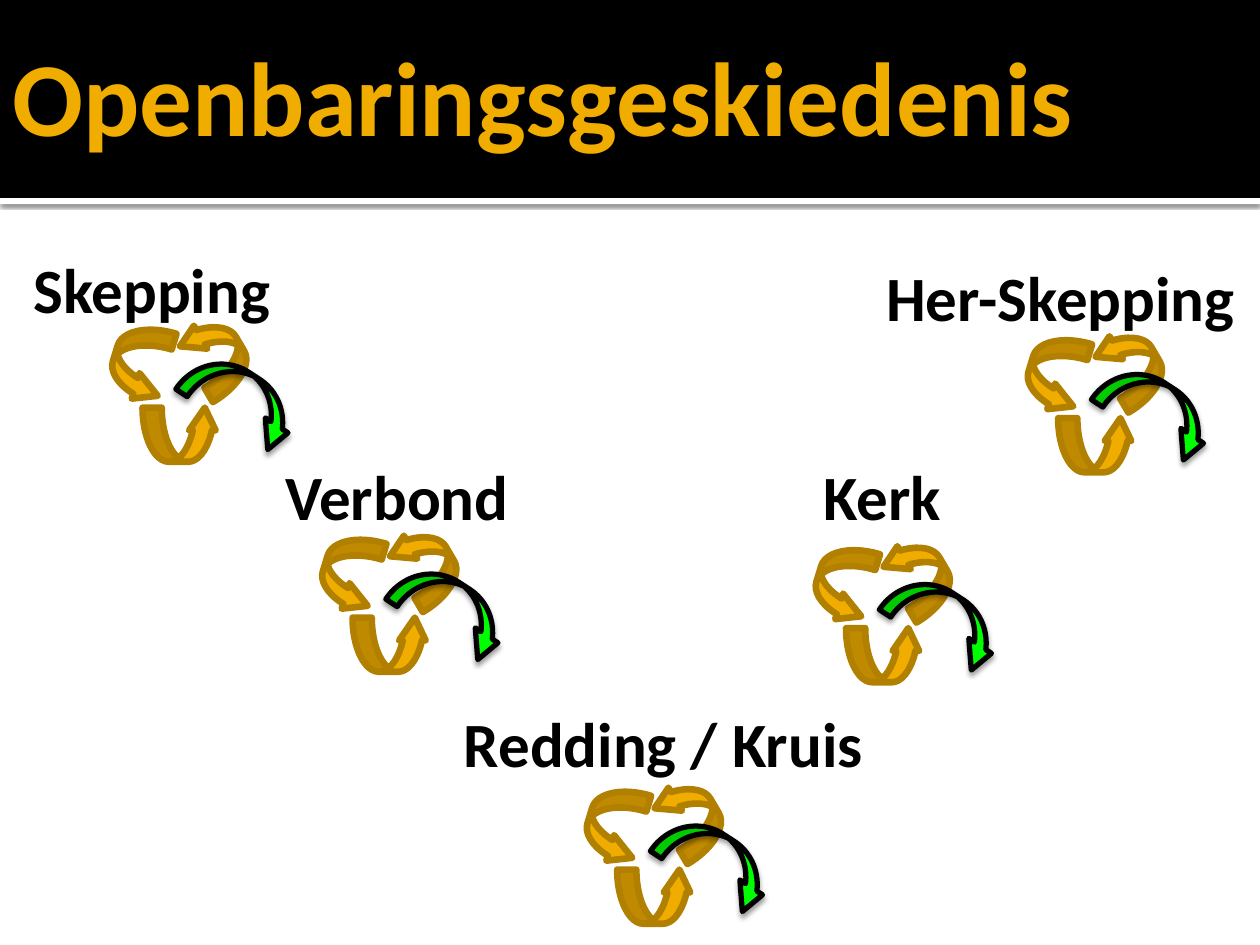
import pptx
import pptx.dml.color
import pptx.enum.shapes
import pptx.enum.text
import pptx.oxml
import pptx.oxml.ns
import pptx.util
from lxml import etree

RGBColor = pptx.dml.color.RGBColor
Shapes = pptx.enum.shapes.MSO_SHAPE
Align = pptx.enum.text.PP_ALIGN
Anchor = pptx.enum.text.MSO_ANCHOR
qn = pptx.oxml.ns.qn

BLACK = RGBColor(0x00, 0x00, 0x00)
WHITE = RGBColor(0xFF, 0xFF, 0xFF)
GOLD = RGBColor(0xF0, 0xAD, 0x00)
DARK_GOLD = RGBColor(0xB2, 0x80, 0x00)
GREEN = RGBColor(0x00, 0xFF, 0x00)

COLUMNS, ROWS = 120, 90
CELL = pptx.util.Inches(10) // COLUMNS

BAND_HEIGHT = 18.85
LABEL_HEIGHT = 8.5

# column, row, width, height, rotation, flips, adjustments; from the cycle's corner
CYCLE_ARROWS = [
    (0, 0, 5.04, 7.44, 16.9, "", (0.311, 0.504, 0.453)),
    (7.25, -0.8, 5.04, 7.44, 329.5, "HV", (0.314, 0.504, 0.422)),
    (3.8, 6.9, 5.16, 7.2, 270, "", (0.355, 0.491, 0.42)),
]
EXIT_ARROW = (9.7, 1.35, 5.16, 11.76, 123.3, "V", (0.25, 0.5, 0.462))

# label, column, row, width, alignment, cycle column, cycle row
STAGES = [
    ("Skepping", 2, 23.3, 30, Align.LEFT, 10.8, 30.9),
    ("Verbond", 26, 43, 29, Align.LEFT, 30.8, 50.9),
    ("Redding / Kruis", 43, 66.5, 42, Align.LEFT, 56, 74.9),
    ("Kerk", 66, 43, 36, Align.CENTER, 77.8, 51.9),
    ("Her-Skepping", 80, 24, 42, Align.CENTER, 98, 31.9),
]


def grid(*cells):
    return [round(cell * CELL) for cell in cells]


def add_shadow(shape, opacity, blur, distance):
    """Give the shape a black shadow falling straight down."""
    shape.shadow.inherit = False
    effects = shape.element.spPr.find(qn("a:effectLst"))
    shadow = etree.SubElement(
        effects, qn("a:outerShdw"),
        blurRad=str(pptx.util.Pt(blur)), dist=str(pptx.util.Pt(distance)),
        dir="5400000", algn="ctr", rotWithShape="0")
    color = etree.SubElement(shadow, qn("a:srgbClr"), val=str(BLACK))
    etree.SubElement(color, qn("a:alpha"), val=str(opacity * 1000))


def add_band(page, row, height, color):
    band = page.shapes.add_shape(Shapes.RECTANGLE, *grid(0, row, COLUMNS, height))
    band.shadow.inherit = False
    band.fill.solid()
    band.fill.fore_color.rgb = color
    band.line.fill.background()
    return band


def add_text(page, text, place, size, color, align=Align.LEFT):
    box = page.shapes.add_textbox(*grid(*place))
    box.text_frame.word_wrap = True
    para = box.text_frame.paragraphs[0]
    para.alignment = align
    span = para.add_run()
    span.text = text
    span.font.name = "Calibri"
    span.font.size = pptx.util.Pt(size)
    span.font.bold = True
    span.font.color.rgb = color
    return box


def add_arrow(group, corner, arrow, fill, line, weight):
    column, row, width, height, rotation, flips, adjustments = arrow
    shape = group.shapes.add_shape(
        Shapes.CURVED_RIGHT_ARROW,
        *grid(corner[0] + column, corner[1] + row, width, height))
    shape.rotation = rotation
    for axis in flips:
        shape.element.spPr.find(qn("a:xfrm")).set("flip" + axis, "1")
    for index, value in enumerate(adjustments):
        shape.adjustments[index] = value
    shape.shadow.inherit = False
    shape.fill.solid()
    shape.fill.fore_color.rgb = fill
    shape.line.color.rgb = line
    shape.line.width = pptx.util.Pt(weight)
    etree.SubElement(shape.element.spPr.find(qn("a:ln")), qn("a:round"))
    return shape


def add_cycle(page, corner):
    """Three gold arrows in a ring, with a green arrow leading out of it."""
    group = page.shapes.add_group_shape()
    for arrow in CYCLE_ARROWS:
        add_arrow(group, corner, arrow, GOLD, DARK_GOLD, 3.78)
    exit_arrow = add_arrow(group, corner, EXIT_ARROW, GREEN, BLACK, 3)
    add_shadow(exit_arrow, 38, 3.1, 2)


def add_header(page):
    stripe = add_band(page, BAND_HEIGHT, 0.6, WHITE)
    add_shadow(stripe, 60, 2.5, 0.8)
    add_band(page, 0, BAND_HEIGHT, BLACK)
    title = add_text(page, "Openbaringsgeskiedenis", (0, 1, COLUMNS, 16), 60, GOLD)
    title.text_frame.vertical_anchor = Anchor.MIDDLE
    title.text_frame.margin_right = pptx.util.Inches(0.05)


def main():
    deck = pptx.Presentation()
    deck.slide_width, deck.slide_height = grid(COLUMNS, ROWS)
    page = deck.slides.add_slide(deck.slide_layouts[6])
    page.background.fill.solid()
    page.background.fill.fore_color.rgb = WHITE
    add_header(page)
    for *_, column, row in STAGES:
        add_cycle(page, (column, row))
    for label, column, row, width, align, *_ in STAGES:
        add_text(page, label, (column, row, width, LABEL_HEIGHT), 36, BLACK, align)
    deck.save("out.pptx")


if __name__ == "__main__":
    main()
